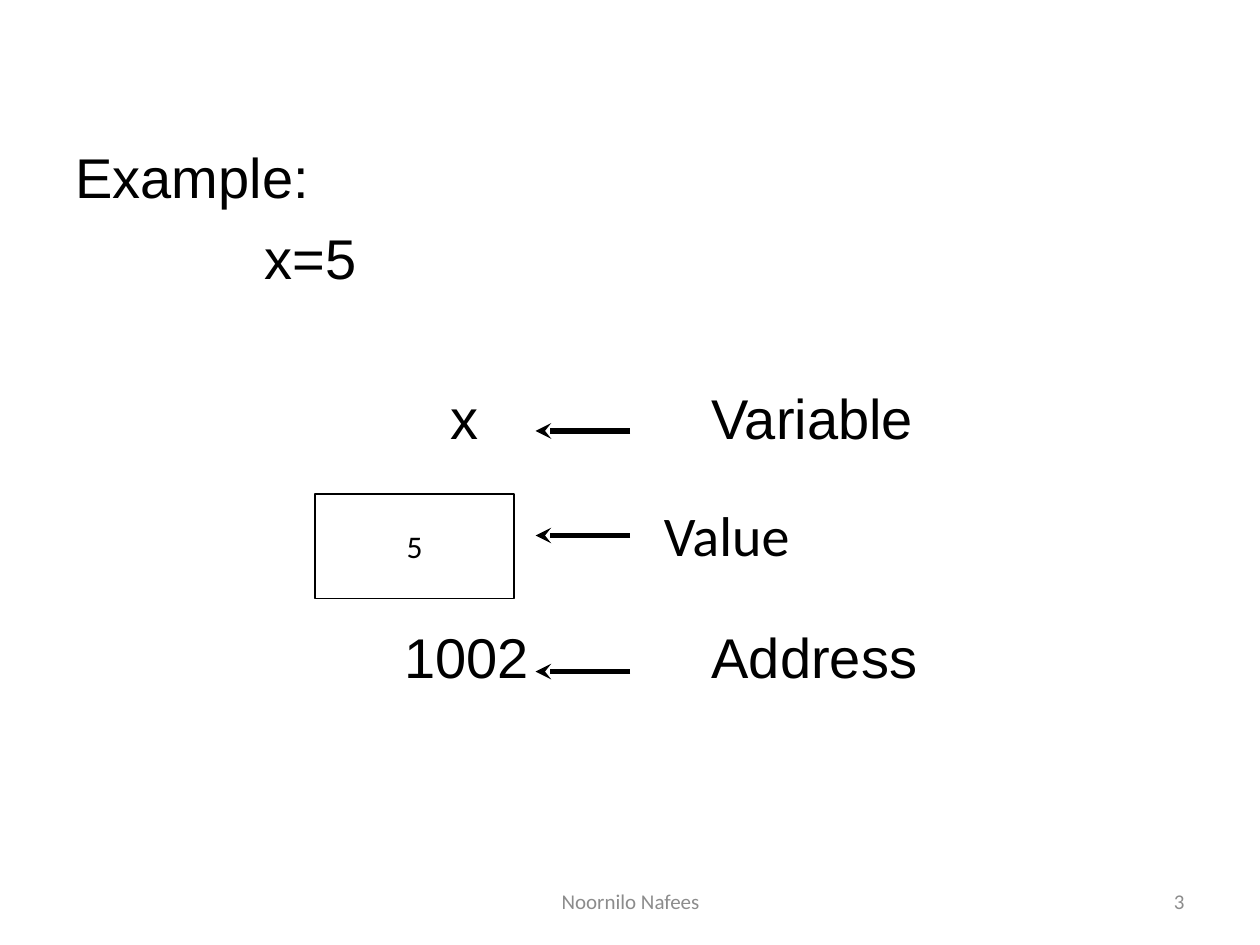
from lxml import etree
from pptx import Presentation
from pptx import util as u
from pptx.dml.color import RGBColor
from pptx.enum import shapes, text
from pptx.oxml.ns import qn

theme = {
    "ink": RGBColor(0, 0, 0),
    "grey": RGBColor(0x8C, 0x8C, 0x8C),
    "sans": "Arial",
    "body": "Calibri",
    "big": 32,
    "mid": 18,
    "small": 12,
}
mid = text.MSO_ANCHOR.MIDDLE
align = text.PP_ALIGN


def style(para, face, size, tint="ink", side=align.LEFT):
    para.font.name = theme[face]
    para.font.size = u.Pt(theme[size])
    para.font.color.rgb = theme[tint]
    para.alignment = side


def label(words, box, anchor=text.MSO_ANCHOR.TOP):
    """Add a wrapped text box with one paragraph per line of words."""
    frame = slide.shapes.add_textbox(*map(u.Inches, box)).text_frame
    frame.word_wrap = True
    frame.vertical_anchor = anchor
    frame.text = words
    return frame.paragraphs


deck = Presentation()
deck.slide_width, deck.slide_height = u.Inches(10), u.Inches(7.5)
slide = deck.slides.add_slide(deck.slide_layouts[6])

# Example text: tab stops in inches and space before in points, per line
lines = [
    ("Example:", [], 4),
    ("\tx=5", [1.5], 8),
    ("\tx\tVariable", [2.98, 5.05], 53),
    ("\t1002\tAddress", [2.61, 5.05], 98),
]
paras = label("\n".join(row[0] for row in lines), (0.5, 1.08, 9, 4.95))
for para, (_, stops, gap) in zip(paras, lines):
    style(para, "sans", "big")
    para.space_before = u.Pt(gap)
    props = para._p.get_or_add_pPr()
    tabs = etree.Element(qn("a:tabLst"))
    for stop in stops:
        etree.SubElement(tabs, qn("a:tab"), pos=str(u.Inches(stop)), algn="l")
    props.insert_element_before(tabs, "a:defRPr", "a:extLst")

# Memory cell
cell = slide.shapes.add_shape(
    shapes.MSO_SHAPE.RECTANGLE, *map(u.Inches, (2.5, 3.92, 1.58, 0.83)))
cell.shadow.inherit = False
cell.fill.background()
cell.line.color.rgb = theme["ink"]
cell.line.width = u.Pt(0.75)
cell.text_frame.text = "5"
cell.text_frame.vertical_anchor = mid
style(cell.text_frame.paragraphs[0], "body", "mid", side=align.CENTER)

# Arrows to variable, value and address
for y in (3.42, 4.25, 5.33):
    arrow = slide.shapes.add_connector(
        shapes.MSO_CONNECTOR.STRAIGHT, *map(u.Inches, (5, y, 4.25, y)))
    arrow.line.color.rgb = theme["ink"]
    arrow.line.width = u.Pt(3)
    etree.SubElement(arrow.line._get_or_add_ln(), qn("a:tailEnd"), type="stealth")
    etree.SubElement(arrow._element.spPr, qn("a:effectLst"))

style(label("Value", (5.17, 3.92, 1.5, 0.63))[0], "body", "big")

# Footer
for words, x, wide, side in (
    ("3", 7.17, 2.33, align.RIGHT),
    ("Noornilo Nafees", 3.42, 3.17, align.CENTER),
):
    para = label(words, (x, 6.95, wide, 0.4), mid)[0]
    style(para, "body", "small", "grey", side)

deck.save("out.pptx")
